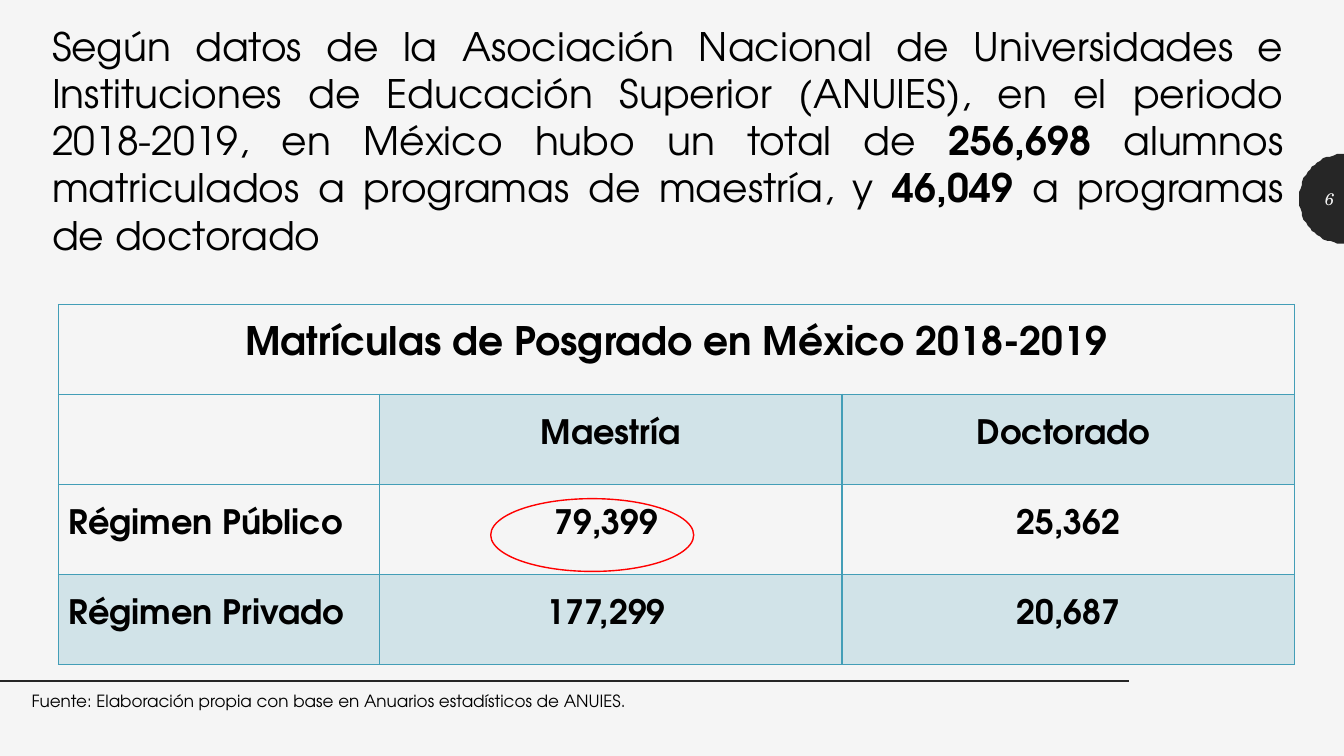
from math import cos, pi, sin

from lxml.etree import SubElement
from pptx import Presentation
from pptx.dml.color import RGBColor
from pptx.enum.shapes import MSO_CONNECTOR as Connector, MSO_SHAPE as Shape
from pptx.enum.text import MSO_ANCHOR as Anchor, MSO_AUTO_SIZE as AutoSize, PP_ALIGN as Align
from pptx.oxml.ns import qn
from pptx.util import Pt

# Content
INTRO = [
    ("Según datos de la Asociación Nacional de Universidades e Instituciones de Educación "
     "Superior (ANUIES), en el periodo 2018-2019, en México hubo un total de ", False),
    ("256,698", True),
    (" alumnos matriculados a programas de maestría, y ", False),
    ("46,049", True),
    (" a programas de doctorado", False),
]
ENROLMENT = [
    ("Matrículas de Posgrado en México 2018-2019", "", ""),
    ("", "Maestría", "Doctorado "),
    ("Régimen Público", "79,399 ", "25,362"),
    ("Régimen Privado", "177,299 ", "20,687"),
]
TINTED = {(1, 1), (1, 2), (3, 0), (3, 1), (3, 2)}
SOURCE = "Fuente: Elaboración propia con base en Anuarios estadísticos de ANUIES."
PAGE = "6"

COLORS = {"back": "F5F5F5", "dark": "262626", "text": "000000", "teal": "439EB7", "red": "FF0000"}
SANS, SERIF = "TeX Gyre Adventor", "TeX Gyre Schola"
WIDTH, HEIGHT = 960, 540
COLUMNS = (229.5, 330.2, 323.2)
ROW = 64.3


def color(key):
    return RGBColor.from_string(COLORS[key])


def style(paragraph, size, align=Align.LEFT, face=SANS, ink="text", bold=None):
    paragraph.alignment = align
    font = paragraph.font
    font.name, font.size, font.bold = face, Pt(size), bold
    font.color.rgb = color(ink)


def place(shape, left, top, width, height):
    shape.left, shape.top, shape.width, shape.height = map(Pt, (left, top, width, height))


def add_text(text, left, top, width, height):
    frame = slide.shapes.add_textbox(*map(Pt, (left, top, width, height))).text_frame
    frame.word_wrap = True
    frame.text = text
    return frame


def set_border(cell, side, width):
    line = SubElement(cell._tc.get_or_add_tcPr(), qn("a:" + side), w=str(Pt(width)))
    fill = SubElement(line, qn("a:solidFill"))
    SubElement(fill, qn("a:srgbClr"), val=COLORS["teal"])


deck = Presentation()
deck.slide_width, deck.slide_height = Pt(WIDTH), Pt(HEIGHT)
slide = deck.slides.add_slide(deck.slide_layouts[5])
slide.background.fill.solid()
slide.background.fill.fore_color.rgb = color("back")

# Half disc with the page number
radius, center_y, steps = 32, 142, 40
arc = [(WIDTH - radius * sin(pi * i / steps), center_y - radius * cos(pi * i / steps))
       for i in range(steps + 1)]
outline = slide.shapes.build_freeform(*arc[0], scale=Pt(1))
outline.add_line_segments(arc[1:], close=True)
half_disc = outline.convert_to_shape()
half_disc.shadow.inherit = False
half_disc.fill.solid()
half_disc.fill.fore_color.rgb = color("dark")
half_disc.line.fill.background()

page = add_text(PAGE, 928, 127.5, 32, 29)
page.vertical_anchor = Anchor.MIDDLE
style(page.paragraphs[0], 12, Align.RIGHT, SERIF, "back")
page.paragraphs[0].font.italic = True

# Footer rule and source
rule = slide.shapes.add_connector(Connector.STRAIGHT, Pt(806.4), Pt(486.5), Pt(0), Pt(486.5))
rule.line.color.rgb = color("dark")
rule.line.width = Pt(1.5)
SubElement(rule._element.spPr, qn("a:effectLst"))
style(add_text(SOURCE, 15.5, 490, 480, 22).paragraphs[0], 12)

# Introduction
intro = slide.shapes.title
place(intro, 30, 12.5, 894, 177)
frame = intro.text_frame
frame.word_wrap = True
frame.auto_size = AutoSize.NONE
frame.vertical_anchor = Anchor.TOP
style(frame.paragraphs[0], 28, Align.JUSTIFY)
for words, bold in INTRO:
    run = frame.paragraphs[0].add_run()
    run.text, run.font.bold = words, bold

# Enrolment table
table = slide.shapes.add_table(
    len(ENROLMENT), len(COLUMNS), Pt(41.8), Pt(217.5),
    Pt(sum(COLUMNS)), Pt(ROW * len(ENROLMENT))).table
table.first_row = table.horz_banding = False
for column, width in zip(table.columns, COLUMNS):
    column.width = Pt(width)
for r, values in enumerate(ENROLMENT):
    table.rows[r].height = Pt(ROW)
    for c, value in enumerate(values):
        cell = table.cell(r, c)
        cell.text = value
        cell.vertical_anchor = Anchor.MIDDLE
        cell.margin_bottom = Pt(10)
        align = Align.LEFT if c == 0 and r > 0 else Align.CENTER
        style(cell.text_frame.paragraphs[0], 24 if r else 28, align, bold=True)
        for side in ("lnL", "lnR", "lnT", "lnB"):
            heavy = (r, side) in {(0, "lnB"), (1, "lnT")}
            set_border(cell, side, 1.5 if heavy else 1)
        if (r, c) in TINTED:
            cell.fill.solid()
            cell.fill.fore_color.rgb = color("teal")
            tint = cell._tc.tcPr.find(qn("a:solidFill"))
            SubElement(tint[0], qn("a:alpha"), val="20000")
        else:
            cell.fill.background()
table.cell(0, 0).merge(table.cell(0, len(COLUMNS) - 1))

# Ring around the public master's figure
ring = slide.shapes.add_shape(Shape.OVAL, Pt(350.5), Pt(356.2), Pt(145), Pt(52))
ring.shadow.inherit = False
ring.fill.background()
ring.line.color.rgb = color("red")
ring.line.width = Pt(1)

deck.save("out.pptx")
